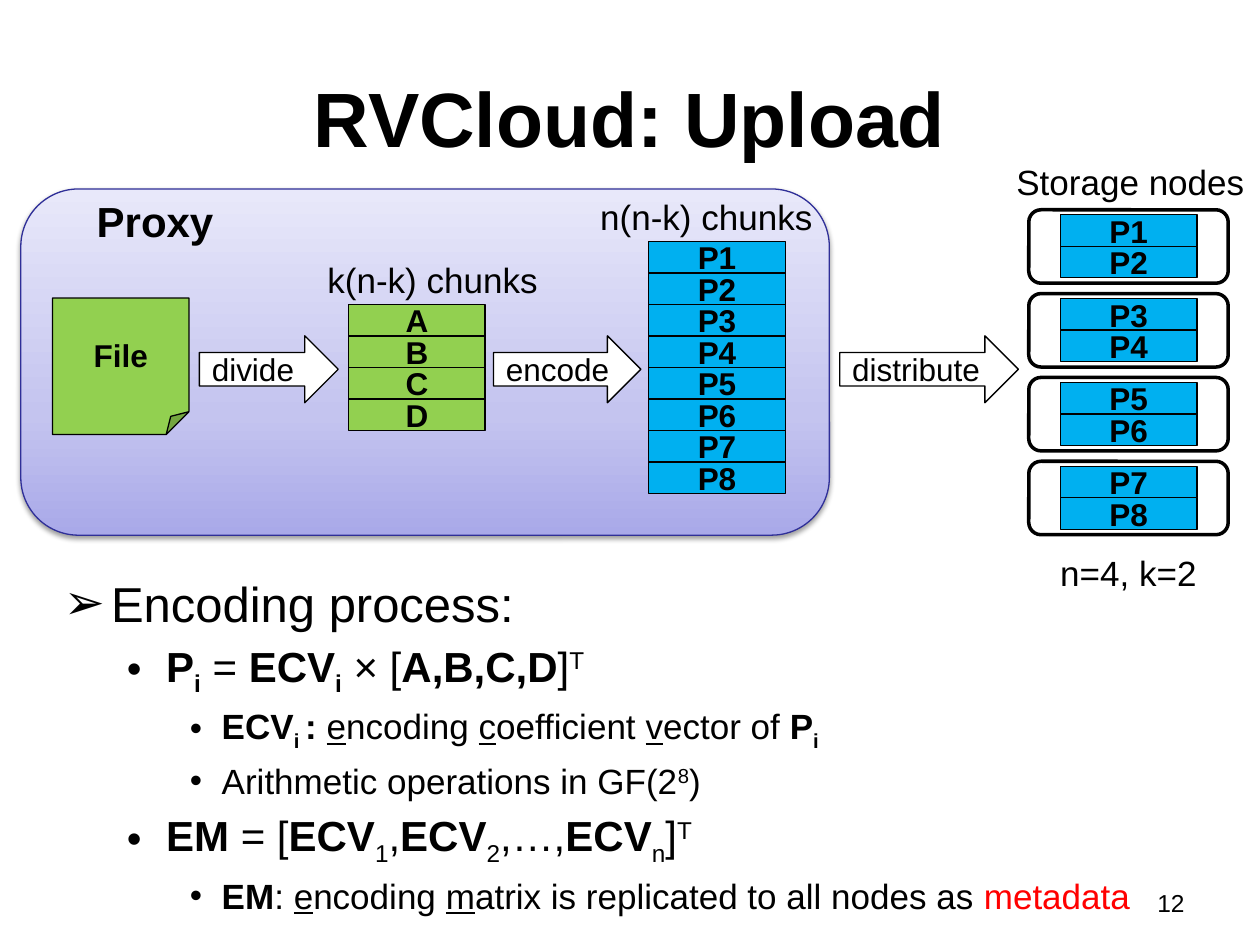
from lxml import etree
from pptx import Presentation
from pptx.dml.color import RGBColor
from pptx.enum.shapes import MSO_SHAPE
from pptx.enum.text import MSO_ANCHOR, PP_ALIGN
from pptx.oxml.ns import qn
from pptx.util import Cm, Pt

RECTANGLE = MSO_SHAPE.RECTANGLE
ROUNDED = MSO_SHAPE.ROUNDED_RECTANGLE
ARROW = MSO_SHAPE.RIGHT_ARROW
FOLDED = MSO_SHAPE.FOLDED_CORNER
LEFT, CENTER, RIGHT = PP_ALIGN.LEFT, PP_ALIGN.CENTER, PP_ALIGN.RIGHT
MIDDLE, TOP = MSO_ANCHOR.MIDDLE, MSO_ANCHOR.TOP

BLACK = RGBColor(0x00, 0x00, 0x00)
WHITE = RGBColor(0xFF, 0xFF, 0xFF)
RED = RGBColor(0xFF, 0x00, 0x00)
BLUE = RGBColor(0x00, 0xB0, 0xF0)
GREEN = RGBColor(0x92, 0xD0, 0x50)
INDIGO = RGBColor(0x2F, 0x2F, 0x98)
PROXY_STOPS = [
    (0, RGBColor(0xA9, 0xA9, 0xE9)),
    (35, RGBColor(0xC4, 0xC4, 0xEF)),
    (100, RGBColor(0xE8, 0xE8, 0xFA)),
]

CHUNK_WIDTH = 2.75
CHUNK_HEIGHT = 5.08 / 8
CODED = [f"P{number}" for number in range(1, 9)]
NODE_COUNT = 4
NODE_PITCH = 1.69

LEVELS = [
    (28, 0.95, -0.95, "➢"),
    (24, 2.06, -0.79, "•"),
    (20, 3.18, -0.64, "•"),
]
OUTLINE = [
    (0, [("Encoding process:", "")]),
    (1, [("P", "b"), ("i", "b_"), (" = ", ""), ("ECV", "b"), ("i", "b_"),
         (" × [", ""), ("A,B,C,D", "b"), ("]", ""), ("T", "^")]),
    (2, [("ECV", "b"), ("i ", "b_"), (": ", "b"), ("e", "u"), ("ncoding ", ""),
         ("c", "u"), ("oefficient ", ""), ("v", "u"), ("ector of ", ""),
         ("P", "b"), ("i", "b_")]),
    (2, [("Arithmetic operations in GF(2", ""), ("8", "^"), (")", "")]),
    (1, [("EM", "b"), (" = [", ""), ("ECV", "b"), ("1", "_"), (",", ""),
         ("ECV", "b"), ("2", "_"), (",…,", ""), ("ECV", "b"), ("n", "_"),
         ("]", ""), ("T", "^")]),
    (2, [("EM", "b"), (": ", ""), ("e", "u"), ("ncoding ", ""), ("m", "u"),
         ("atrix is replicated to all nodes as ", ""), ("metadata", "r")]),
]


class SlideBuilder:
    """Draws styled elements on the current slide, with lengths in centimetres."""

    font_name = "Arial"

    def __init__(self, slide):
        self.slide = slide

    def style_run(self, run, size, bold=False, color=BLACK):
        run.font.name = self.font_name
        run.font.size = Pt(size)
        run.font.bold = bold
        run.font.color.rgb = color

    def set_text(self, shape, text, size, bold=False, align=LEFT, anchor=MIDDLE):
        frame = shape.text_frame
        frame.text = text
        frame.vertical_anchor = anchor
        paragraph = frame.paragraphs[0]
        paragraph.alignment = align
        self.style_run(paragraph.runs[0], size, bold)

    def title(self, text, left, top, width, height):
        shape = self.slide.shapes.title
        shape.left, shape.top = Cm(left), Cm(top)
        shape.width, shape.height = Cm(width), Cm(height)
        self.set_text(shape, text, 44, True, CENTER)

    def label(self, text, left, top, width, height, size=20, bold=False,
              align=LEFT, wrap=False):
        box = self.slide.shapes.add_textbox(Cm(left), Cm(top), Cm(width), Cm(height))
        box.text_frame.word_wrap = wrap
        self.set_text(box, text, size, bold, align, TOP)

    def shape(self, kind, left, top, width, height, fill=None, line=BLACK, weight=0.75):
        shape = self.slide.shapes.add_shape(
            kind, Cm(left), Cm(top), Cm(width), Cm(height))
        shape.shadow.inherit = False
        if fill is None:
            shape.fill.background()
        else:
            shape.fill.solid()
            shape.fill.fore_color.rgb = fill
        shape.line.color.rgb = line
        shape.line.width = Pt(weight)
        return shape

    def stack(self, names, left, top, fill):
        for row, name in enumerate(names):
            chunk = self.shape(RECTANGLE, left, top + row * CHUNK_HEIGHT,
                               CHUNK_WIDTH, CHUNK_HEIGHT, fill)
            self.set_text(chunk, name, 18, True, CENTER)

    def arrow(self, text, left, width):
        self.set_text(self.shape(ARROW, left, 6.77, width, 1.35, WHITE), text, 18)

    def panel(self, left, top, width, height):
        panel = self.shape(ROUNDED, left, top, width, height, line=INDIGO)
        panel.fill.gradient()
        properties = panel._element.spPr
        gradient = properties.find(qn("a:gradFill"))
        stops = gradient.find(qn("a:gsLst"))
        for stop in list(stops):
            stops.remove(stop)
        for position, color in PROXY_STOPS:
            stop = etree.SubElement(stops, qn("a:gs"), pos=str(position * 1000))
            etree.SubElement(stop, qn("a:srgbClr"), val=str(color))
        gradient.find(qn("a:lin")).set("ang", str(270 * 60000))
        shadow = etree.SubElement(
            properties.find(qn("a:effectLst")), qn("a:outerShdw"),
            blurRad=str(Pt(3.1)), dist=str(Pt(1.6)), dir=str(90 * 60000), rotWithShape="0")
        shade = etree.SubElement(shadow, qn("a:srgbClr"), val=str(BLACK))
        etree.SubElement(shade, qn("a:alpha"), val="38000")

    def outline(self, items, left, top, width, height):
        box = self.slide.shapes.add_textbox(Cm(left), Cm(top), Cm(width), Cm(height))
        frame = box.text_frame
        frame.word_wrap = True
        for index, (level, pieces) in enumerate(items):
            paragraph = frame.add_paragraph() if index else frame.paragraphs[0]
            size, margin, indent, bullet = LEVELS[level]
            paragraph.level = level
            paragraph.space_before = Pt(size * (0.2 if level else 0.5))
            properties = paragraph._p.get_or_add_pPr()
            properties.set("marL", str(Cm(margin)))
            properties.set("indent", str(Cm(indent)))
            etree.SubElement(properties, qn("a:buFont"), typeface=self.font_name)
            etree.SubElement(properties, qn("a:buChar"), char=bullet)
            for text, marks in pieces:
                run = paragraph.add_run()
                run.text = text
                self.style_run(run, size, "b" in marks, RED if "r" in marks else BLACK)
                run.font.underline = "u" in marks
                if "_" in marks:
                    run.font._element.set("baseline", "-25000")
                elif "^" in marks:
                    run.font._element.set("baseline", "30000")


def main():
    presentation = Presentation()
    presentation.slide_width, presentation.slide_height = Cm(25.4), Cm(19.05)
    builder = SlideBuilder(presentation.slides.add_slide(presentation.slide_layouts[5]))

    builder.title("RVCloud: Upload", 1.27, 0.76, 22.86, 3.18)
    builder.outline(OUTLINE, 1.04, 11.43, 22.86, 6.98)
    builder.label("12", 18.21, 17.78, 5.92, 0.89, 14, align=RIGHT, wrap=True)

    builder.panel(0.42, 3.81, 16.3, 6.98)
    builder.label("Proxy", 1.7, 3.81, 2.9, 1.27, 24, True)
    file_shape = builder.shape(FOLDED, 1.06, 6.01, CHUNK_WIDTH, CHUNK_WIDTH, GREEN)
    builder.set_text(file_shape, "File", 18, True, CENTER)
    builder.arrow("divide", 4.02, 2.8)
    builder.label("k(n-k) chunks", 6.35, 5.08, 4.78, 1.12)
    builder.stack("ABCD", 7.03, 6.14, GREEN)
    builder.arrow("encode", 9.95, 2.97)
    builder.label("n(n-k) chunks", 11.85, 3.81, 4.83, 1.12)
    builder.stack(CODED, 13.08, 4.87, BLUE)
    builder.arrow("distribute", 16.93, 3.6)

    builder.label("Storage nodes", 20.24, 3.12, 5.16, 1.12)
    for node in range(NODE_COUNT):
        offset = node * NODE_PITCH
        builder.shape(ROUNDED, 20.74, 4.23 + offset, 4.02, 1.48, weight=2)
        builder.stack(CODED[2 * node:2 * node + 2], 21.38, 4.33 + offset, BLUE)
    builder.label("n=4, k=2", 20.74, 11, 4.02, 1.12, align=CENTER, wrap=True)

    presentation.save("out.pptx")


if __name__ == "__main__":
    main()
